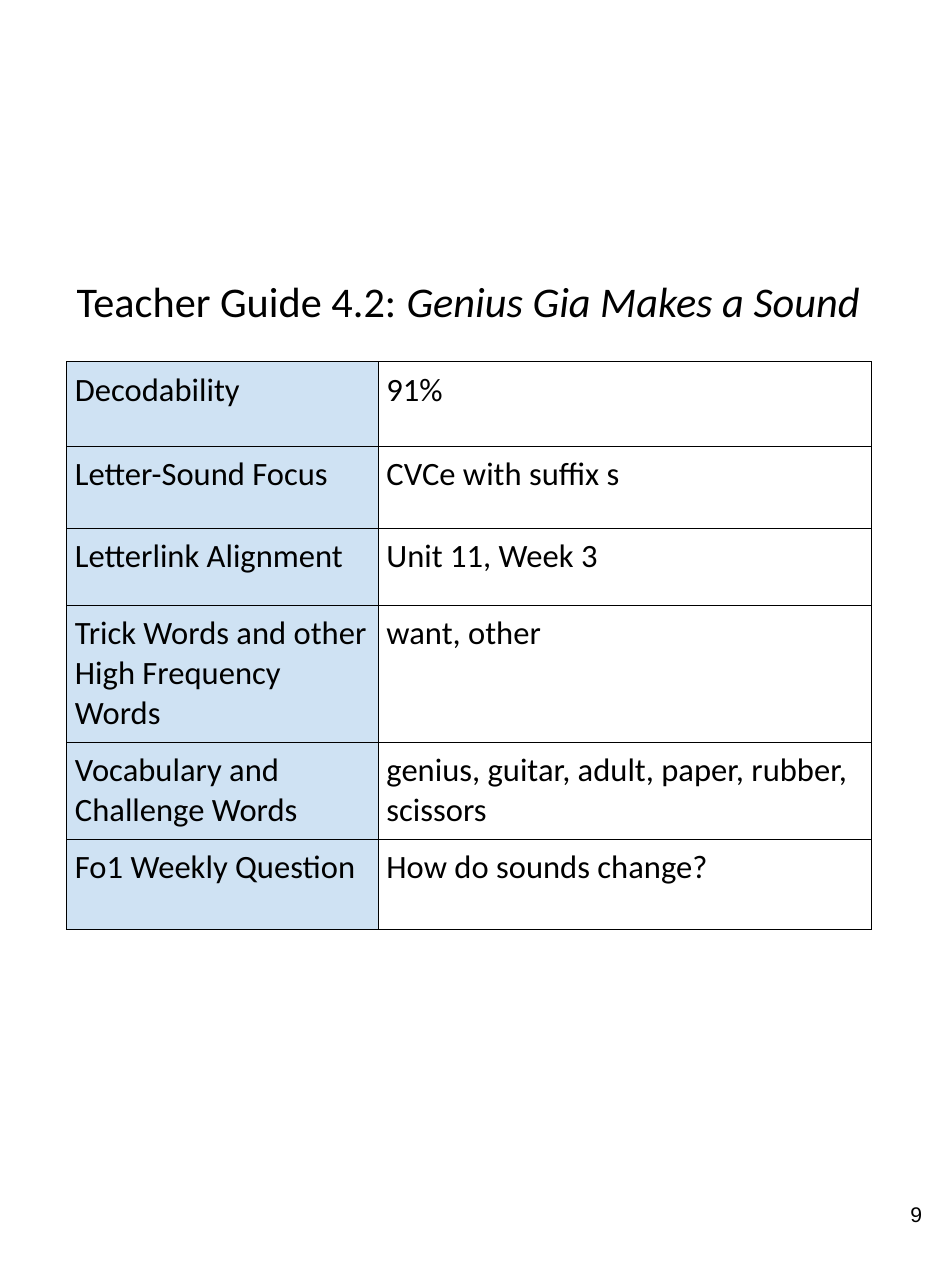
"""Build the Teacher Guide 4.2 slide with its overview table."""
from lxml.etree import SubElement
from pptx import Presentation
from pptx.dml.color import RGBColor
from pptx.enum.text import MSO_ANCHOR, MSO_AUTO_SIZE, PP_ALIGN
from pptx.oxml.ns import qn
from pptx.util import Pt

EMU_PER_PX = 9144
BLACK = RGBColor(0x00, 0x00, 0x00)
LABEL_BLUE = RGBColor(0xCF, 0xE2, 0xF3)
COLUMN_WIDTHS = (266, 421)
GUIDE_ROWS = (
    (72, "Decodability", "91%"),
    (70, "Letter-Sound Focus", "CVCe with suffix s"),
    (66, "Letterlink Alignment", "Unit 11, Week 3"),
    (117, "Trick Words and other High Frequency Words", "want, other"),
    (83, "Vocabulary and Challenge Words", "genius, guitar, adult, paper, rubber, scissors"),
    (77, "Fo1 Weekly Question", "How do sounds change?"),
)


def px(length):
    return length * EMU_PER_PX


def style_paragraph(para, font_name, size, align):
    para.alignment = align
    para.font.name = font_name
    para.font.size = Pt(size)
    para.font.color.rgb = BLACK


def set_margins(target, margin):
    target.margin_left = target.margin_right = px(margin)
    target.margin_top = target.margin_bottom = px(margin)


def place_title(slide, heading, book):
    title = slide.shapes.title
    title.left, title.top, title.width, title.height = map(px, (40, 105, 720, 183))
    frame = title.text_frame
    frame.auto_size = MSO_AUTO_SIZE.NONE
    frame.vertical_anchor = MSO_ANCHOR.BOTTOM
    set_margins(frame, 10)
    para = frame.paragraphs[0]
    style_paragraph(para, "Calibri", 26, PP_ALIGN.CENTER)
    para.add_run().text = heading
    span = para.add_run()
    span.text = book
    span.font.italic = True


def add_borders(cell):
    properties = cell._tc.get_or_add_tcPr()
    for side in ("lnL", "lnR", "lnT", "lnB"):
        line = SubElement(properties, qn(f"a:{side}"), w=str(Pt(0.75)))
        fill = SubElement(line, qn("a:solidFill"))
        SubElement(fill, qn("a:srgbClr"), val=str(BLACK))


def fill_cell(cell, text, is_label):
    cell.text = text
    set_margins(cell, 7)
    style_paragraph(cell.text_frame.paragraphs[0], "Calibri", 20, PP_ALIGN.LEFT)
    add_borders(cell)
    if is_label:
        cell.fill.solid()
        cell.fill.fore_color.rgb = LABEL_BLUE
    else:
        cell.fill.background()


def add_guide_table(slide):
    total_height = sum(height for height, *_ in GUIDE_ROWS)
    table = slide.shapes.add_table(
        len(GUIDE_ROWS), len(COLUMN_WIDTHS),
        px(57), px(309), px(sum(COLUMN_WIDTHS)), px(total_height),
    ).table
    table.first_row = table.horz_banding = False
    for column, width in zip(table.columns, COLUMN_WIDTHS):
        column.width = px(width)
    for row, (height, *texts) in zip(table.rows, GUIDE_ROWS):
        row.height = px(height)
        for index, text in enumerate(texts):
            fill_cell(row.cells[index], text, is_label=index == 0)


def add_page_number(slide, number):
    box = slide.shapes.add_textbox(px(749), px(1016), px(48), px(84))
    frame = box.text_frame
    frame.word_wrap = True
    set_margins(frame, 10)
    frame.text = number
    style_paragraph(frame.paragraphs[0], "Arial", 13, PP_ALIGN.RIGHT)


def main():
    deck = Presentation()
    deck.slide_width, deck.slide_height = px(800), px(1100)
    page = deck.slides.add_slide(deck.slide_layouts.get_by_name("Title Only"))
    place_title(page, "Teacher Guide 4.2: ", "Genius Gia Makes a Sound")
    add_guide_table(page)
    add_page_number(page, "9")
    deck.save("out.pptx")


if __name__ == "__main__":
    main()
